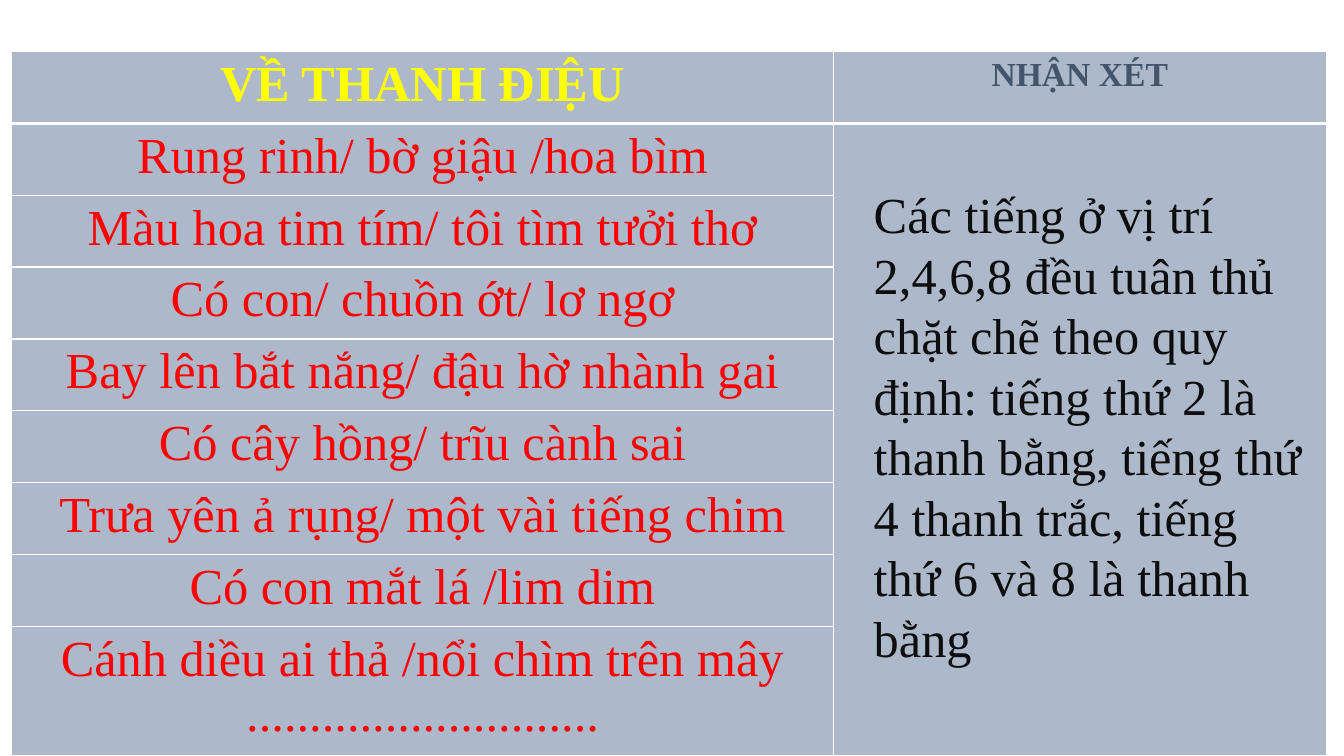
import pptx
import pptx.dml.color
import pptx.enum.text
import pptx.oxml
import pptx.oxml.ns
import pptx.util

Cm = pptx.util.Cm
Pt = pptx.util.Pt
RGB = pptx.dml.color.RGBColor

WHITE = RGB(0xFF, 0xFF, 0xFF)
GREY = RGB(0xAD, 0xB9, 0xCA)
YELLOW = RGB(0xFF, 0xFF, 0x00)
SLATE = RGB(0x44, 0x54, 0x6A)
RED = RGB(0xFF, 0x00, 0x00)
BLACK = RGB(0x0D, 0x0D, 0x0D)
FONT = "Times New Roman"
CENTER = pptx.enum.text.PP_ALIGN.CENTER

VERSES = [
    "Rung rinh/ bờ giậu /hoa bìm",
    "Màu hoa tim tím/ tôi tìm tưởi thơ",
    "Có con/ chuồn ớt/ lơ ngơ",
    "Bay lên bắt nắng/ đậu hờ nhành gai",
    "Có cây hồng/ trĩu cành sai",
    "Trưa yên ả rụng/ một vài tiếng chim",
    "Có con mắt lá /lim dim",
    "Cánh diều ai thả /nổi chìm trên mây\n............................",
]
REMARK = (
    "Các tiếng ở vị trí 2,4,6,8 đều tuân thủ chặt chẽ theo quy định: "
    "tiếng thứ 2 là thanh bằng, tiếng thứ 4 thanh trắc, "
    "tiếng thứ 6 và 8 là thanh bằng"
)


def write(frame, text, size, color, bold=False, align=None):
    frame.text = text
    for para in frame.paragraphs:
        para.alignment = align
        font = para.font
        font.name, font.size, font.bold = FONT, Pt(size), bold
        font.color.rgb = color


def edge(cell, top, base):
    """Draw the four borders of a cell; widths in points."""
    props = cell._tc.get_or_add_tcPr()
    for side, width in (("L", 1), ("R", 1), ("T", top), ("B", base)):
        props.append(pptx.oxml.parse_xml(
            f'<a:ln{side} {pptx.oxml.ns.nsdecls("a")} w="{Pt(width)}">'
            f'<a:solidFill><a:srgbClr val="{WHITE}"/></a:solidFill></a:ln{side}>'))


def add_verses(slide, left, top, width, height):
    count = len(VERSES) + 1
    table = slide.shapes.add_table(count, 2, left, top, width, height).table

    # Column widths and row heights; the last row takes the rest
    table.columns[0].width = Cm(20.7)
    table.columns[1].width = width - Cm(20.7)
    step = Cm(1.81)
    for row in table.rows:
        row.height = step
    table.rows[count - 1].height = height - step * (count - 1)

    # One tall cell behind the remark
    table.cell(1, 1).merge(table.cell(count - 1, 1))

    # Borders and fill
    for num in range(count):
        for col in range(2):
            cell = table.cell(num, col)
            if not cell.is_spanned:
                edge(cell, 3 if num == 1 else 1, 3 if num == 0 else 1)
            cell.fill.solid()
            cell.fill.fore_color.rgb = GREY

    # Header and verses
    write(table.cell(0, 0).text_frame, "VỀ THANH ĐIỆU", 36, YELLOW, True, CENTER)
    write(table.cell(0, 1).text_frame, "NHẬN XÉT", 24, SLATE, True, CENTER)
    for num, verse in enumerate(VERSES, 1):
        write(table.cell(num, 0).text_frame, verse, 36, RED, False, CENTER)


def add_remark(slide, left, top, width, height):
    frame = slide.shapes.add_textbox(left, top, width, height).text_frame
    frame.word_wrap = True
    frame.auto_size = pptx.enum.text.MSO_AUTO_SIZE.SHAPE_TO_FIT_TEXT
    write(frame, REMARK, 36, BLACK)


def main():
    deck = pptx.Presentation()
    deck.slide_width, deck.slide_height = Cm(33.87), Cm(19.05)
    slide = deck.slides.add_slide(deck.slide_layouts[6])
    add_verses(slide, Cm(0.3), Cm(1.3), Cm(33.12), Cm(17.73))
    add_remark(slide, Cm(21.77), Cm(4.5), Cm(11.66), Cm(12.57))
    deck.save("out.pptx")


if __name__ == "__main__":
    main()
